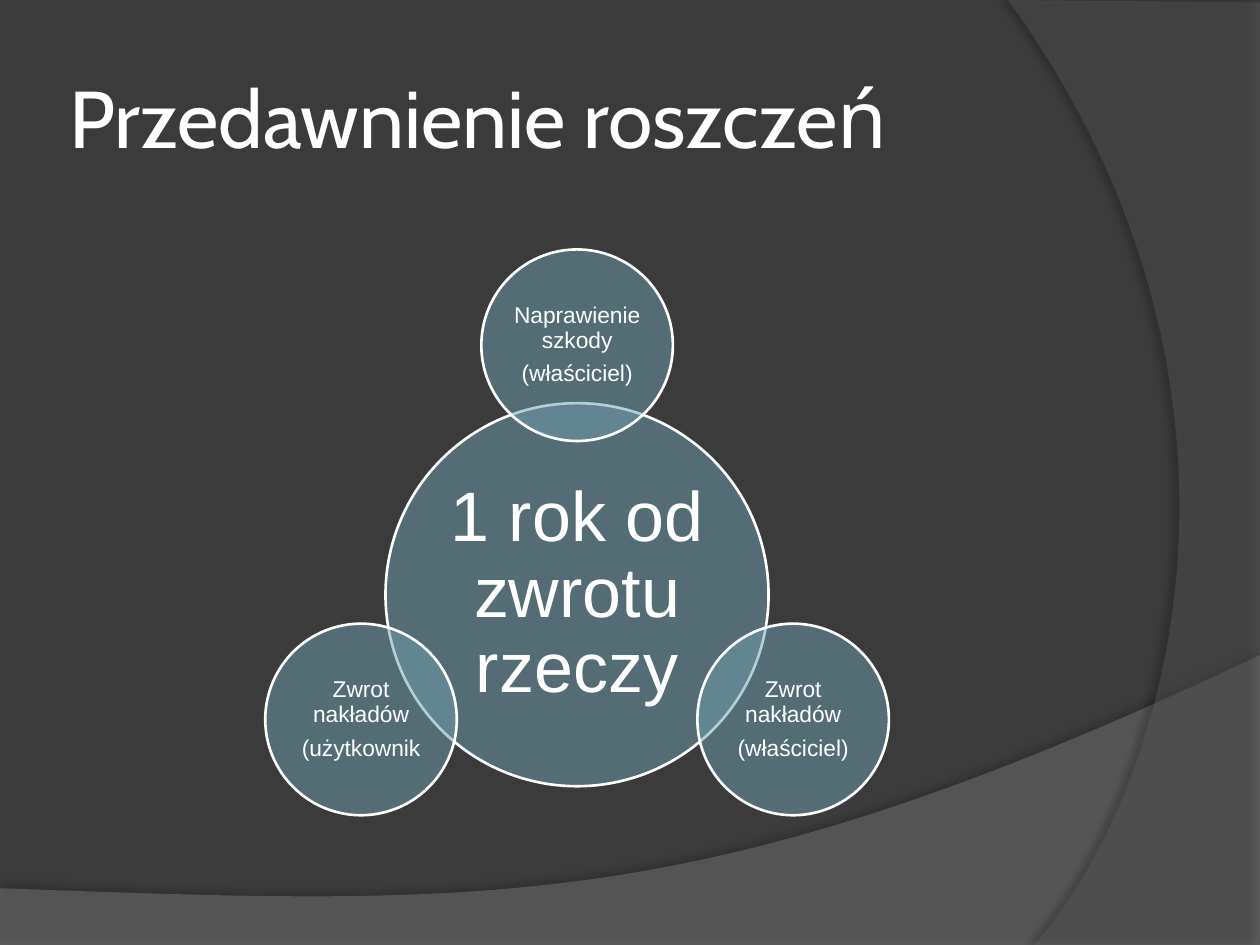
"""Build the slide on limitation of claims: a radial Venn diagram over two curved bands."""
from math import cos, radians, sin

from lxml import etree
from pptx import Presentation
from pptx import util as u
from pptx.dml.color import RGBColor
from pptx.enum import shapes, text
from pptx.oxml.ns import qn

TITLE = "Przedawnienie roszczeń"
CORE = ["1 rok od zwrotu rzeczy"]
CLAIMS = [
    (-90, ["Naprawienie szkody", "(właściciel)"]),
    (30, ["Zwrot nakładów", "(właściciel)"]),
    (150, ["Zwrot nakładów", "(użytkownik"]),
]
COLORS = {"back": "3B3B3B", "text": "FFFFFF", "circle": "6EA0B0",
          "wave": "7F7F7F", "arc": "5E5E5E", "shadow": "000000"}
BANDS = [
    {"color": "wave", "alpha": 45, "shadow": (35, 4, 3.5, 270),
     "corners": [(0, 7.05), (0, 7.5), (10, 7.5)],
     "curve": [(10, 5.2), (5.59, 7.29), (3.91, 7.19), (0, 7.05)]},
    {"color": "arc", "alpha": 40, "shadow": (45, 4, 4, 180),
     "corners": [(10, 0.02), (10, 7.5)],
     "curve": [(8.21, 7.5), (9.35, 6.19), (10.18, 3), (8, 0)]},
]
CENTER = (4.58, 4.72)
CORE_SIZE, CLAIM_SIZE, ORBIT = 3.04, 1.52, 1.98
CURVE_STEPS = 60


def rgb(name):
    return RGBColor.from_string(COLORS[name])


def assign(target, values):
    for name, value in values.items():
        setattr(target, name, value)


def add_alpha(color, percent):
    etree.SubElement(color, qn("a:alpha"), val=str(percent * 1000))


def fill_glass(shape, color, percent):
    shape.shadow.inherit = False
    shape.fill.solid()
    shape.fill.fore_color.rgb = rgb(color)
    add_alpha(shape.fill._xPr.find(qn("a:solidFill"))[0], percent)


def curve_points(curve):
    for step in range(CURVE_STEPS + 1):
        t = step / CURVE_STEPS
        weights = ((1 - t) ** 3, 3 * t * (1 - t) ** 2, 3 * t * t * (1 - t), t ** 3)
        yield tuple(sum(w * p[axis] for w, p in zip(weights, curve)) for axis in (0, 1))


def add_band(slide, depth, band):
    points = [(u.Inches(x), u.Inches(y))
              for x, y in [*band["corners"], *curve_points(band["curve"])]]
    outline = slide.shapes.build_freeform(*points[0])
    outline.add_line_segments(points[1:], close=True)
    shape = outline.convert_to_shape()
    fill_glass(shape, band["color"], band["alpha"])
    shape.line.fill.background()
    alpha, blur, distance, angle = band["shadow"]
    effects = shape._element.spPr.find(qn("a:effectLst"))
    shadow = etree.SubElement(effects, qn("a:outerShdw"), blurRad=str(u.Pt(blur)),
                              dist=str(u.Pt(distance)), dir=str(angle * 60000))
    add_alpha(etree.SubElement(shadow, qn("a:srgbClr"), val=COLORS["shadow"]), alpha)
    slide.shapes._spTree.insert(2 + depth, shape._element)


def format_frame(frame, inset, anchor=text.MSO_ANCHOR.MIDDLE):
    assign(frame, {"word_wrap": True, "auto_size": text.MSO_AUTO_SIZE.NONE,
                   "vertical_anchor": anchor})
    for side in ("left", "right", "top", "bottom"):
        setattr(frame, "margin_" + side, u.Inches(inset))


def format_font(font, name, size):
    assign(font, {"name": name, "size": u.Pt(size)})
    font.color.rgb = rgb("text")


def add_circle(diagram, center, size, lines, font_size, inset):
    left, top = (u.Inches(c - size / 2) for c in center)
    circle = diagram.shapes.add_shape(shapes.MSO_SHAPE.OVAL, left, top,
                                      u.Inches(size), u.Inches(size))
    fill_glass(circle, "circle", 50)
    circle.line.color.rgb = rgb("text")
    circle.line.width = u.Pt(1.5)
    frame = circle.text_frame
    format_frame(frame, inset)
    frame.text = "\n".join(lines)
    for paragraph in frame.paragraphs:
        assign(paragraph, {"alignment": text.PP_ALIGN.CENTER, "line_spacing": 0.9,
                           "space_after": u.Pt(0.4 * font_size)})
        format_font(paragraph.runs[0].font, "Arial", font_size)


def main():
    deck = Presentation()
    assign(deck, {"slide_width": u.Inches(10), "slide_height": u.Inches(7.5)})
    slide = deck.slides.add_slide(deck.slide_layouts[5])
    slide.background.fill.solid()
    slide.background.fill.fore_color.rgb = rgb("back")
    for depth, band in enumerate(BANDS):
        add_band(slide, depth, band)

    title = slide.shapes.title
    assign(title, {"left": u.Inches(0.5), "top": u.Inches(0.3),
                   "width": u.Inches(8.17), "height": u.Inches(1.25)})
    format_frame(title.text_frame, 0.05)
    title.text_frame.text = TITLE
    heading = title.text_frame.paragraphs[0]
    heading.alignment = text.PP_ALIGN.LEFT
    format_font(heading.runs[0].font, "Cabin", 46)

    diagram = slide.shapes.add_group_shape()
    add_circle(diagram, CENTER, CORE_SIZE, CORE, 40, 0.06)
    for angle, lines in CLAIMS:
        turn = radians(angle)
        center = (CENTER[0] + ORBIT * cos(turn), CENTER[1] + ORBIT * sin(turn))
        add_circle(diagram, center, CLAIM_SIZE, lines, 13, 0.02)
    deck.save("out.pptx")


if __name__ == "__main__":
    main()
